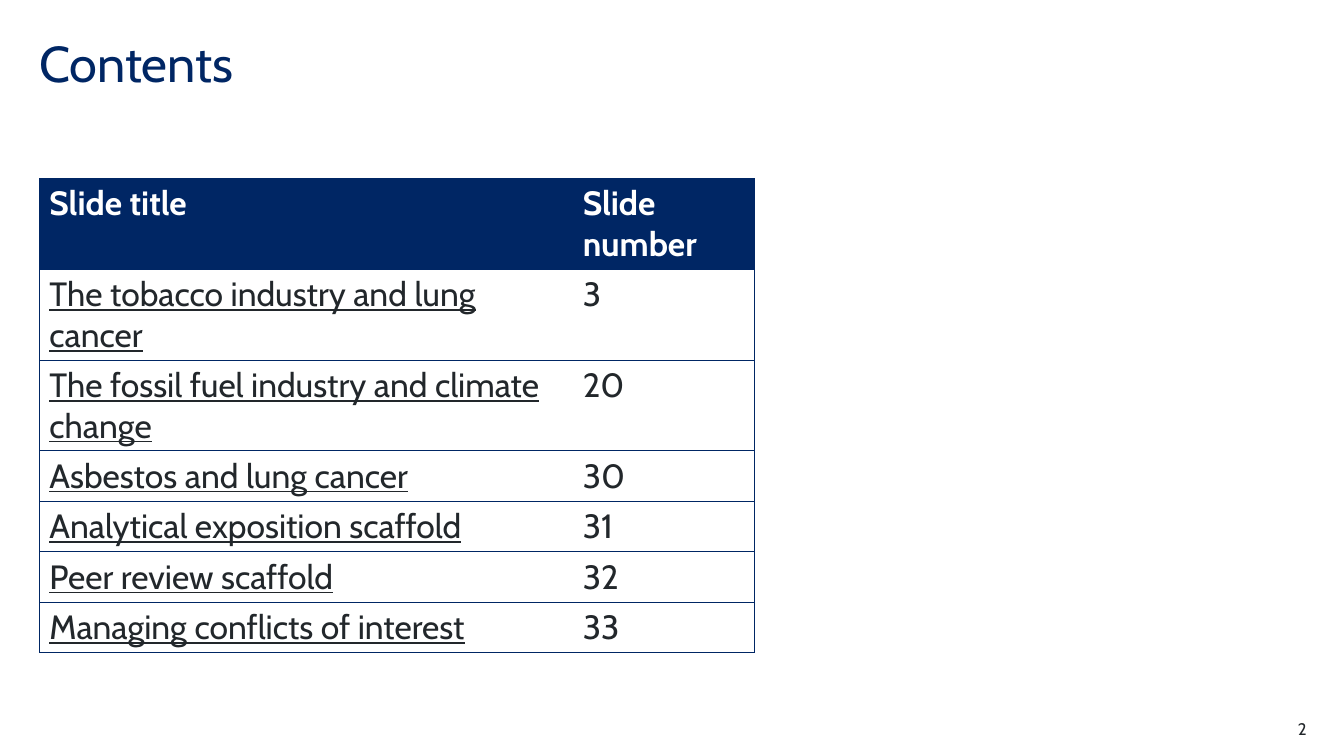
import pptx
import pptx.util
import pptx.dml.color
import pptx.enum.text
import pptx.oxml
import pptx.oxml.ns

Inches = pptx.util.Inches
Pt = pptx.util.Pt
RGBColor = pptx.dml.color.RGBColor
ALIGN = pptx.enum.text.PP_ALIGN

NAVY = RGBColor(0x00, 0x26, 0x64)
INK = RGBColor(0x22, 0x27, 0x2B)
WHITE = RGBColor(0xFF, 0xFF, 0xFF)


def write(para, text, size, color, **format):
    run = para.add_run()
    run.text = text
    run.font.color.rgb = color
    values = {"name": "Cabin", "size": Pt(size), **format}
    for key, value in values.items():
        setattr(run.font, key, value)


def edge(cell, side, color):
    if color is None:
        paint = "<a:noFill/>"
    else:
        paint = f'<a:solidFill><a:srgbClr val="{color}"/></a:solidFill>'
    return pptx.oxml.parse_xml(
        f'<a:ln{side} {pptx.oxml.ns.nsdecls("a")} w="{Pt(0.5)}">{paint}</a:ln{side}>'
    )


deck = pptx.Presentation()
deck.slide_width = Inches(13.33)
deck.slide_height = Inches(7.5)
slide = deck.slides.add_slide(deck.slide_layouts[6])

labels = [
    ("Contents", (0.39, 0.39, 11.02, 1.1), 36, NAVY, ALIGN.LEFT, 0.9),
    ("2", (12.17, 7.13, 0.79, 0.2), 12, INK, ALIGN.RIGHT, 1.0),
]
for text, place, size, color, align, space in labels:
    box = slide.shapes.add_textbox(*map(Inches, place))
    frame = box.text_frame
    format = {
        "word_wrap": True,
        "margin_left": 0,
        "margin_right": 0,
        "margin_top": 0,
        "margin_bottom": 0,
    }
    for key, value in format.items():
        setattr(frame, key, value)
    para = frame.paragraphs[0]
    para.alignment = align
    para.line_spacing = space
    write(para, text, size, color)

rows = [
    ("Slide title", "Slide number"),
    ("The tobacco industry and lung cancer", "3"),
    ("The fossil fuel industry and climate change", "20"),
    ("Asbestos and lung cancer", "30"),
    ("Analytical exposition scaffold", "31"),
    ("Peer review scaffold", "32"),
    ("Managing conflicts of interest", "33"),
]
widths = [5.29, 1.8]
height = 0.41
table = slide.shapes.add_table(
    len(rows), len(widths), Inches(0.39), Inches(1.77),
    Inches(sum(widths)), Inches(height * len(rows)),
).table
table.horz_banding = False
for col, width in zip(table.columns, widths):
    col.width = Inches(width)

for r, row in enumerate(rows):
    table.rows[r].height = Inches(height)
    head = r == 0
    for c, text in enumerate(row):
        cell = table.cell(r, c)
        if head:
            cell.fill.solid()
            cell.fill.fore_color.rgb = NAVY
        else:
            cell.fill.background()
        sides = {
            "L": NAVY if c == 0 else None,
            "R": NAVY if c == 1 else None,
            "T": NAVY,
            "B": NAVY,
        }
        props = cell._tc.get_or_add_tcPr()
        for i, (side, color) in enumerate(sides.items()):
            props.insert(i, edge(cell, side, color))
        write(
            cell.text_frame.paragraphs[0], text, 24, WHITE if head else INK,
            bold=head, underline=not head and c == 0,
        )

deck.save("out.pptx")
